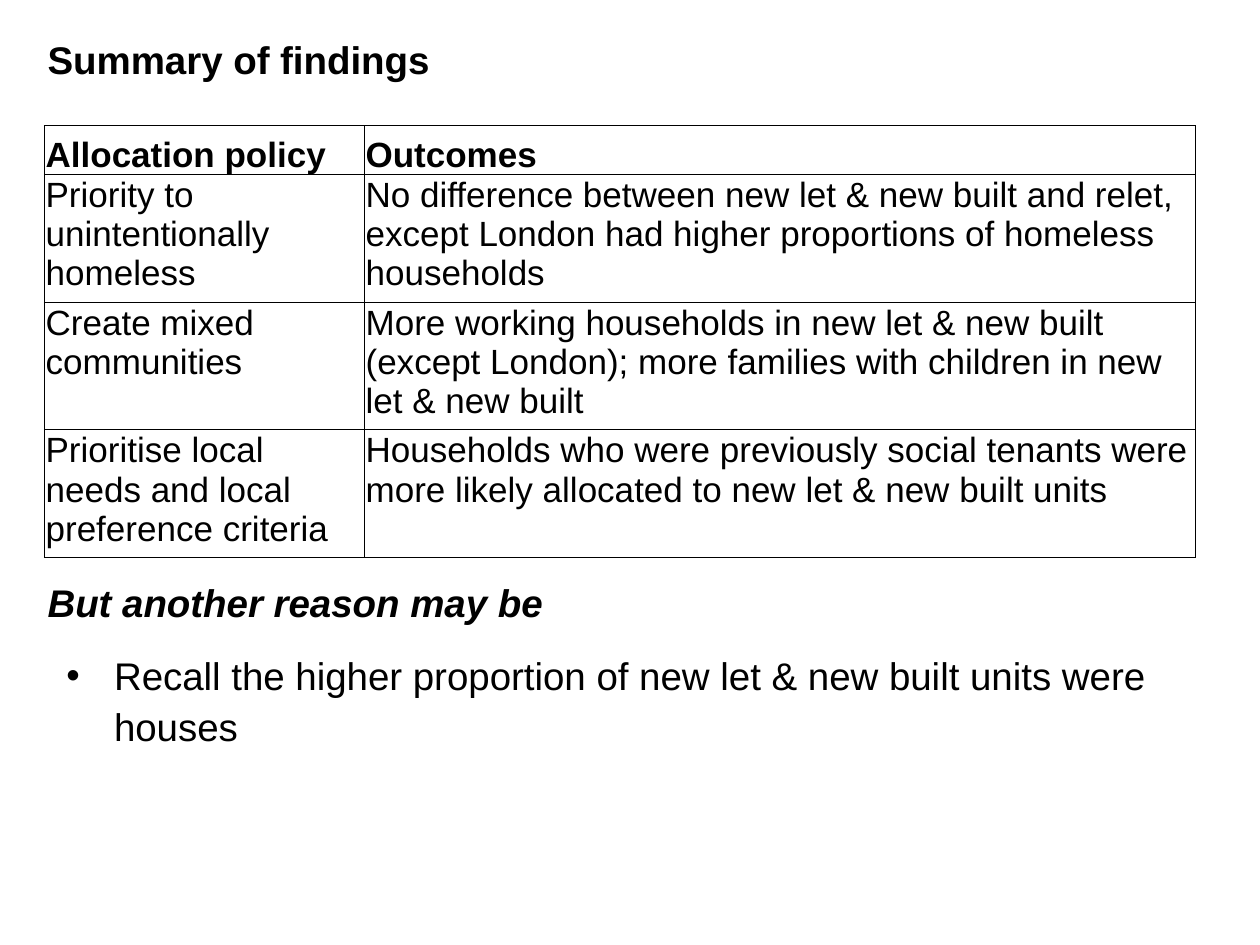
from dataclasses import dataclass

from lxml import etree
from pptx import Presentation
from pptx import util as u
from pptx.dml.color import RGBColor
from pptx.enum import text
from pptx.oxml import ns

COLORS = {"ink": "000000", "paper": "FFFFFF"}
FONT = "Arial"
INDENT = u.Cm(0.96)


@dataclass
class TextBlock:
    words: str
    left: float
    top: float
    width: float
    height: float
    bold: bool = False
    italic: bool = False
    bullet: bool = False


BLOCKS = [
    TextBlock("Summary of findings", 0.71, 0, 24.69, 2.39, bold=True),
    TextBlock("Recall the higher proportion of new let & new built units were houses",
              1.09, 12.93, 22.6, 2.13, bullet=True),
    TextBlock("But another reason may be", 0.71, 11.33, 24.69, 1.6,
              bold=True, italic=True),
]

FINDINGS = [
    ("Allocation policy", "Outcomes"),
    ("Priority to unintentionally homeless",
     "No difference between new let & new built and relet, "
     "except London had higher proportions of homeless households"),
    ("Create mixed communities",
     "More working households in new let & new built (except London); "
     "more families with children in new let & new built"),
    ("Prioritise local needs and local preference criteria",
     "Households who were previously social tenants were "
     "more likely allocated to new let & new built units"),
]
COLUMN_WIDTHS = [6.45, 16.76]
HEADER_HEIGHT, ROW_HEIGHT = 0.99, 2.5


def format_paragraph(para, size: int, bold: bool = False, italic: bool = False) -> None:
    para.alignment = text.PP_ALIGN.LEFT
    for span in para.runs:
        font = span.font
        font.name, font.size = FONT, u.Pt(size)
        font.bold, font.italic = bold, italic
        font.color.rgb = RGBColor.from_string(COLORS["ink"])


def add_bullet(para) -> None:
    properties = para._p.get_or_add_pPr()
    properties.set("marL", str(INDENT))
    properties.set("indent", str(-INDENT))
    etree.SubElement(properties, ns.qn("a:buFont"), typeface=FONT)
    etree.SubElement(properties, ns.qn("a:buChar"), char="•")


def add_text(page, block: TextBlock) -> None:
    box = page.shapes.add_textbox(u.Cm(block.left), u.Cm(block.top),
                                  u.Cm(block.width), u.Cm(block.height))
    frame = box.text_frame
    frame.word_wrap = True
    frame.vertical_anchor = text.MSO_ANCHOR.MIDDLE
    frame.text = block.words
    para = frame.paragraphs[0]
    format_paragraph(para, 22, block.bold, block.italic)
    if block.bullet:
        frame.vertical_anchor = text.MSO_ANCHOR.TOP
        para.line_spacing = 1.1
        add_bullet(para)


def add_borders(cell) -> None:
    properties = cell._tc.get_or_add_tcPr()
    for index, side in enumerate(("a:lnL", "a:lnR", "a:lnT", "a:lnB")):
        line = etree.Element(ns.qn(side), w=str(u.Pt(0.5)))
        fill = etree.SubElement(line, ns.qn("a:solidFill"))
        etree.SubElement(fill, ns.qn("a:srgbClr"), val=COLORS["ink"])
        properties.insert(index, line)


def add_findings(page) -> None:
    heights = [HEADER_HEIGHT] + [ROW_HEIGHT] * (len(FINDINGS) - 1)
    table = page.shapes.add_table(
        len(FINDINGS), len(COLUMN_WIDTHS), u.Cm(0.89), u.Cm(2.53),
        u.Cm(sum(COLUMN_WIDTHS)), u.Cm(sum(heights))).table
    for column, width in zip(table.columns, COLUMN_WIDTHS):
        column.width = u.Cm(width)
    for row, height, (row_index, entries) in zip(table.rows, heights, enumerate(FINDINGS)):
        row.height = u.Cm(height)
        header = row_index == 0
        for cell, words in zip(row.cells, entries):
            cell.text_frame.text = words
            format_paragraph(cell.text_frame.paragraphs[0], 20, bold=header)
            cell.margin_left = cell.margin_right = cell.margin_top = u.Cm(0.03)
            cell.margin_bottom = 0
            cell.vertical_anchor = (text.MSO_ANCHOR.BOTTOM if header
                                    else text.MSO_ANCHOR.TOP)
            cell.fill.background()
            add_borders(cell)


def main() -> None:
    deck = Presentation()
    deck.slide_width, deck.slide_height = u.Cm(25.4), u.Cm(19.05)
    page = deck.slides.add_slide(deck.slide_layouts[6])
    page.background.fill.solid()
    page.background.fill.fore_color.rgb = RGBColor.from_string(COLORS["paper"])

    # Title, table, then the closing point with its heading
    title, *closing = BLOCKS
    add_text(page, title)
    add_findings(page)
    for block in closing:
        add_text(page, block)

    deck.save("out.pptx")


if __name__ == "__main__":
    main()
